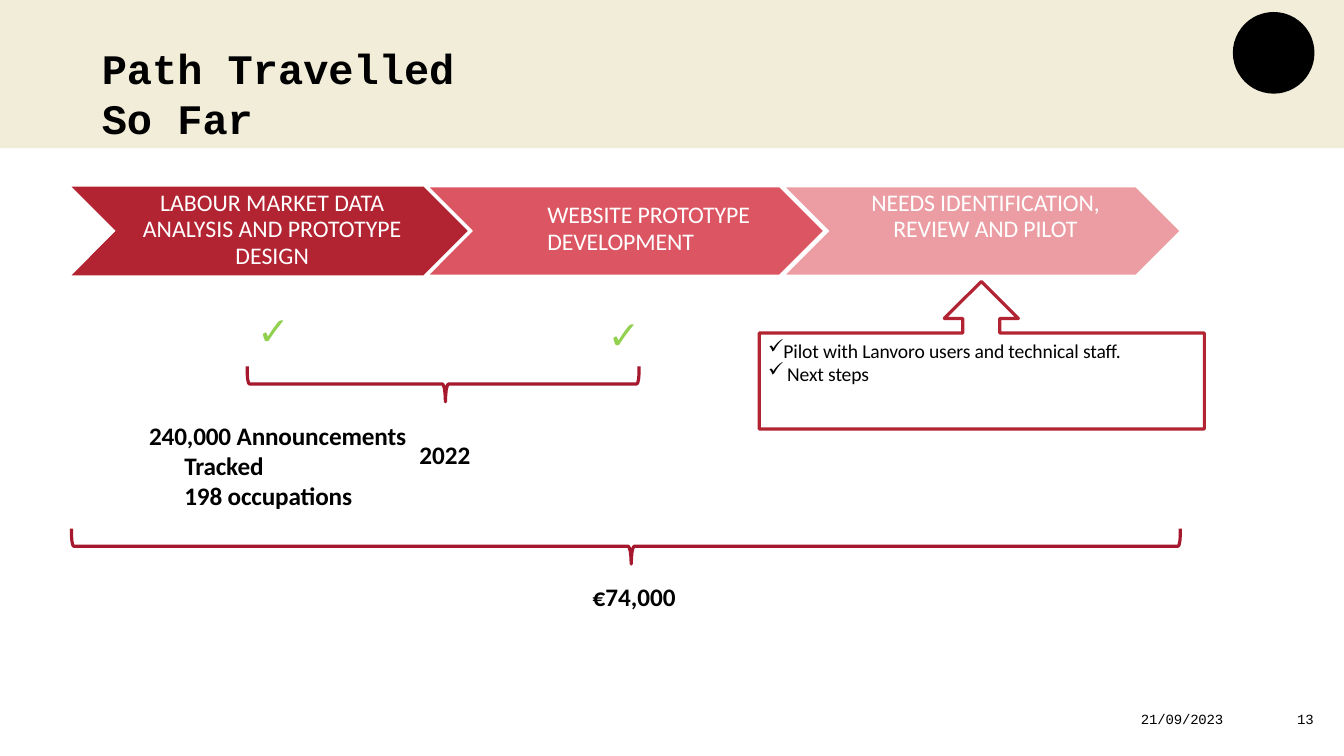
from lxml import etree
from pptx import Presentation
from pptx.dml.color import RGBColor
from pptx.enum.shapes import MSO_SHAPE
from pptx.enum.text import MSO_ANCHOR, PP_ALIGN
from pptx.oxml.ns import qn
from pptx.util import Pt

CHEVRON, RECTANGLE, OVAL = MSO_SHAPE.CHEVRON, MSO_SHAPE.RECTANGLE, MSO_SHAPE.OVAL
LEFT, CENTER, TOP = PP_ALIGN.LEFT, PP_ALIGN.CENTER, MSO_ANCHOR.TOP

# Content: boxes are (left, top, width, height) in points
BLACK, WHITE, CREAM, GREEN = "000000", "FFFFFF", "F1EDD9", "92D050"
CRIMSON, BRACE_RED = "B32433", "A6182D"

TITLE = ("Path Travelled So Far", (72, 29.5, 263.5, 72.7))
FOOTER = [
    ("21/09/2023", (814.3, 506.9, 62.6, 13)),
    ("13", (925.9, 506.9, 14.4, 13)),
]
# fill, label, label box, alignment, line spacing, top inset, letter spacing
STAGES = [
    (CRIMSON, "LABOUR MARKET DATA ANALYSIS AND PROTOTYPE DESIGN",
     (88.6, 133.2, 211, 59), CENTER, 0.92, 2.9, 0),
    ("DC5562", "WEBSITE PROTOTYPE DEVELOPMENT",
     (388.1, 142.6, 153.4, 62), LEFT, Pt(19.5), 0.7, -0.1),
    ("EB9DA3", "NEEDS IDENTIFICATION, REVIEW AND PILOT",
     (603.4, 133.2, 200.2, 40.3), CENTER, 0.92, 2.9, -0.1),
]
CHECK = "✓"
CHECK_BOXES = [(182.9, 218.2, 23, 34.6), (433.4, 221, 23, 34.6)]
# text, left margin, first line indent, line spacing
NEXT_STEPS = [
    ("Pilot with Lanvoro users and technical staff.", 0.7, 0, Pt(16.7)),
    ("Next steps", 14.4, -13.7, Pt(16.4)),
]
NEXT_STEPS_BOX = (547.9, 240.5, 301.7, 34.6)
# text, left margin, first line indent
FIGURES = [
    ("240,000 Announcements", 0.7, 0),
    ("Tracked", 5, 20.9),
    ("198 occupations", 5, 20.9),
]
FIGURES_BOX = (105.8, 299.5, 193, 66.2)
# left, middle, right, top of the brace; label, label box
BRACES = [
    (176.6, 318.2, 456.5, 261.7, "2022", (298.8, 313.2, 38.9, 22.3)),
    (51.1, 450.9, 843.1, 377.6, "€74,000", (422.6, 414.7, 65.5, 22.3)),
]

# Layout rules
STAGE_LEFT, STAGE_TOP, STAGE_STEP = 51.1, 133.3, 254.5
STAGE_WIDTH, STAGE_HEIGHT = 283, 63.3
BRACE_END = [(0, 0), (0, 5), (0.3, 9), (0.9, 11.7), (1.6, 12.6)]
BRACE_TIP = [(2, 12.6), (1.3, 13.8), (0.6, 16.4), (0.2, 20.6), (0, 25.3)]
CALLOUT = {"left": 542.3, "right": 860.3, "middle": 701, "tip": 201.1,
           "neck": 227.5, "top": 237.9, "bottom": 306.5, "head": 26.5, "stem": 13.2}

deck = Presentation()
deck.slide_width, deck.slide_height = Pt(960), Pt(540)
page = deck.slides.add_slide(deck.slide_layouts[6])


def color(value):
    return RGBColor.from_string(value)


def add_block(kind, box, fill):
    shape = page.shapes.add_shape(kind, *(Pt(length) for length in box))
    shape.shadow.inherit = False
    shape.fill.solid()
    shape.fill.fore_color.rgb = color(fill)
    shape.line.fill.background()
    return shape


def add_outline(points, line, closed):
    corners = [(Pt(x), Pt(y)) for x, y in points]
    builder = page.shapes.build_freeform(*corners[0])
    builder.add_line_segments(corners[1:], close=closed)
    shape = builder.convert_to_shape()
    shape.shadow.inherit = False
    shape.fill.background()
    shape.line.color.rgb = color(line)
    shape.line.width = Pt(2.28)


def add_text(lines, box, size, font="Calibri", ink=BLACK, bold=False,
             align=LEFT, inset=0.7, tracking=0.0, bullet=None):
    """Each line is (text, left margin, first line indent, line spacing)."""
    frame = page.shapes.add_textbox(*(Pt(length) for length in box)).text_frame
    frame.word_wrap = True
    frame.vertical_anchor = TOP
    frame.margin_left = frame.margin_right = frame.margin_bottom = 0
    frame.margin_top = Pt(inset)
    for index, (text, margin, indent, spacing) in enumerate(lines):
        para = frame.add_paragraph() if index else frame.paragraphs[0]
        para.alignment = align
        properties = para._p.get_or_add_pPr()
        properties.set("marL", str(Pt(margin)))
        properties.set("indent", str(Pt(indent)))
        if bullet:
            etree.SubElement(properties, qn("a:buChar")).set("char", bullet)
            tabs = etree.SubElement(properties, qn("a:tabLst"))
            tab = etree.SubElement(tabs, qn("a:tab"))
            tab.set("pos", str(Pt(14.4)))
            tab.set("algn", "l")
        if spacing:
            para.line_spacing = spacing
        span = para.add_run()
        span.text = text
        span.font.name, span.font.size, span.font.bold = font, Pt(size), bold
        span.font.color.rgb = color(ink)
        if tracking:
            span._r.get_or_add_rPr().set("spc", str(round(tracking * 100)))


def single(text, margin=0.7, spacing=None):
    return [(text, margin, 0, spacing)]


# Header band, emblem, title and footer
add_block(RECTANGLE, (0, 0, 960, 105.8), CREAM)
add_block(OVAL, (880.6, 8.6, 58.3, 58.3), BLACK)
add_text(single(TITLE[0]), TITLE[1], 30, font="Courier New", bold=True)
for text, box in FOOTER:
    add_text(single(text), box, 10, font="Courier New", tracking=-0.1)

# Stages
for index, (fill, label, box, align, spacing, inset, tracking) in enumerate(STAGES):
    left = STAGE_LEFT + index * STAGE_STEP
    chevron = add_block(CHEVRON, (left, STAGE_TOP, STAGE_WIDTH, STAGE_HEIGHT), fill)
    chevron.adjustments[0] = 0.5
    if index:
        chevron.line.color.rgb = color(WHITE)
        chevron.line.width = Pt(0.96)
    margin = 2.9 if align == LEFT else 0.7
    add_text(single(label, margin, spacing), box, 17, ink=WHITE, align=align,
             inset=inset, tracking=tracking)

# Next steps callout with its arrow
add_text(NEXT_STEPS, NEXT_STEPS_BOX, 14, inset=1.4, tracking=-0.1, bullet=CHECK)
c = CALLOUT
stem_left, stem_right = c["middle"] - c["stem"], c["middle"] + c["stem"]
add_outline([
    (c["left"], c["top"]), (stem_left, c["top"]), (stem_left, c["neck"]),
    (c["middle"] - c["head"], c["neck"]), (c["middle"], c["tip"]),
    (c["middle"] + c["head"], c["neck"]), (stem_right, c["neck"]),
    (stem_right, c["top"]), (c["right"], c["top"]),
    (c["right"], c["bottom"]), (c["left"], c["bottom"]),
], CRIMSON, closed=True)

# Check marks
for box in CHECK_BOXES:
    add_text(single(CHECK), box, 28, font="Cabin", ink=GREEN)

# Braces with their labels
for left, middle, right, top, label, box in BRACES:
    first_half = [(left + x, top + y) for x, y in BRACE_END]
    first_half += [(middle - x, top + y) for x, y in BRACE_TIP]
    second_half = [(middle + x, top + y) for x, y in reversed(BRACE_TIP[:-1])]
    second_half += [(right - x, top + y) for x, y in reversed(BRACE_END)]
    add_outline(first_half + second_half, BRACE_RED, closed=False)
    add_text(single(label), box, 18, bold=True)

# Tracked figures
add_text([(*figure, None) for figure in FIGURES], FIGURES_BOX, 18, bold=True,
         tracking=-0.1)

deck.save("out.pptx")
